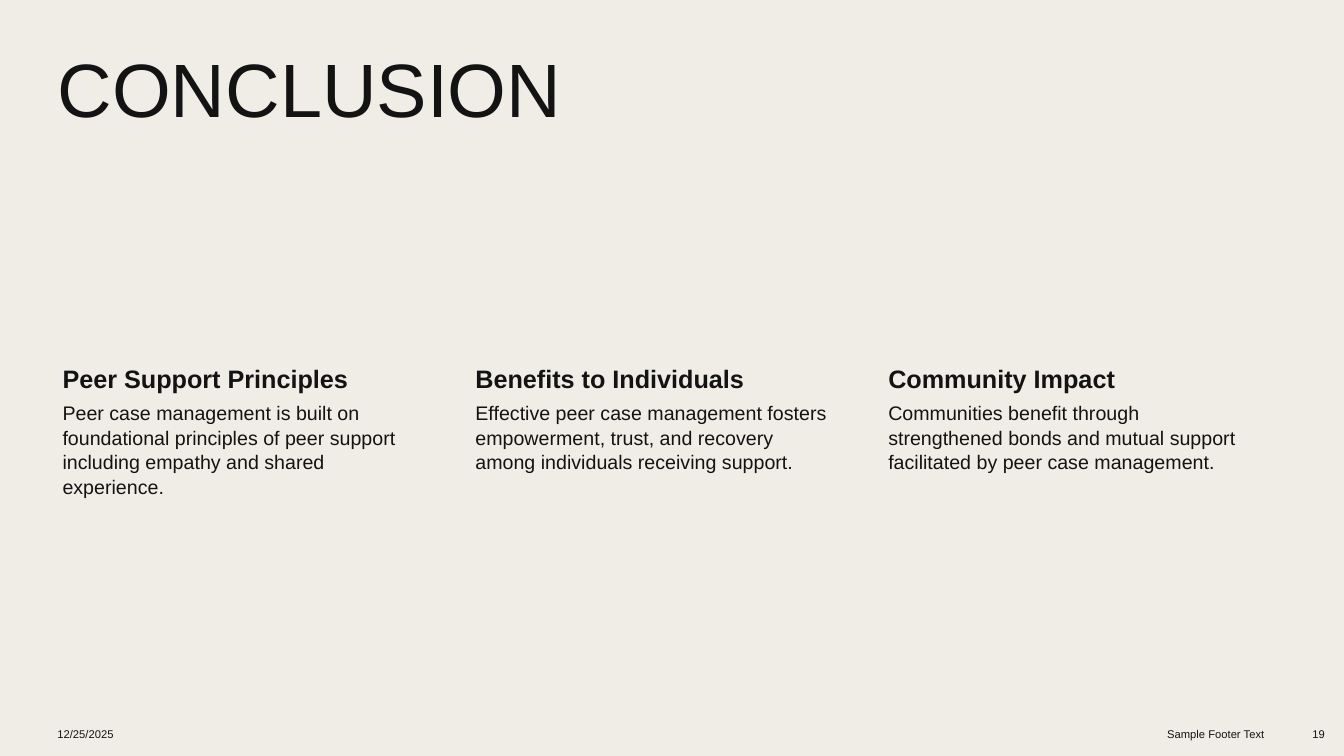
from dataclasses import dataclass

from pptx import Presentation
from pptx.dml.color import RGBColor
from pptx.enum.text import MSO_ANCHOR, MSO_AUTO_SIZE, PP_ALIGN
from pptx.shapes.base import BaseShape
from pptx.slide import Slide
from pptx.util import Inches, Pt

LEFT, RIGHT = PP_ALIGN.LEFT, PP_ALIGN.RIGHT
TOP, MIDDLE = MSO_ANCHOR.TOP, MSO_ANCHOR.MIDDLE
NO_AUTOFIT = MSO_AUTO_SIZE.NONE


@dataclass(frozen=True)
class Theme:
    font: str = "Arial"
    background: RGBColor = RGBColor(0xF0, 0xED, 0xE6)
    ink: RGBColor = RGBColor(0x13, 0x13, 0x13)
    title: int = 54
    heading: int = 18
    body: int = 14
    footer: int = 8


@dataclass(frozen=True)
class Box:
    left: float
    top: float
    width: float
    height: float


@dataclass(frozen=True)
class Style:
    size: int
    bold: bool = False
    align: PP_ALIGN = LEFT
    anchor: MSO_ANCHOR = TOP
    insets: tuple[float, float, float, float] = (0.1, 0.05, 0.1, 0.05)
    line_spacing: float = 1.0
    space_after: float = 0


@dataclass(frozen=True)
class Topic:
    heading: str
    body: str


@dataclass(frozen=True)
class FooterItem:
    text: str
    left: float
    width: float
    align: PP_ALIGN


THEME = Theme()
TITLE_BOX = Box(0.47, 0.47, 11.91, 1.78)
COLUMN_WIDTH = 3.72
HEADING_TOP, HEADING_HEIGHT = 3.57, 0.38
BODY_HEIGHT = 2.65
FOOTER_TOP, FOOTER_HEIGHT = 7.1, 0.37

TITLE_STYLE = Style(THEME.title, line_spacing=0.9)
HEADING_STYLE = Style(THEME.heading, bold=True, insets=(0.15, 0.03, 0.03, 0.03))
BODY_STYLE = Style(THEME.body, insets=(0.15, 0.02, 0.02, 0.02), line_spacing=1.04)

TOPICS = [
    Topic(
        "Peer Support Principles",
        "Peer case management is built on foundational principles of peer support "
        "including empathy and shared experience.",
    ),
    Topic(
        "Benefits to Individuals",
        "Effective peer case management fosters empowerment, trust, and recovery "
        "among individuals receiving support.",
    ),
    Topic(
        "Community Impact",
        "Communities benefit through strengthened bonds and mutual support "
        "facilitated by peer case management.",
    ),
]

FOOTER_ITEMS = [
    FooterItem("12/25/2025", 0.47, 3.11, LEFT),
    FooterItem("Sample Footer Text", 9.73, 2.91, RIGHT),
    FooterItem("19", 12.74, 0.5, RIGHT),
]


def set_all(target: object, values: dict[str, object]) -> None:
    for name, value in values.items():
        setattr(target, name, value)


def write(sp: BaseShape, box: Box, text: str, style: Style) -> None:
    set_all(sp, {
        "left": Inches(box.left),
        "top": Inches(box.top),
        "width": Inches(box.width),
        "height": Inches(box.height),
    })
    tf = sp.text_frame
    left, top, right, bottom = style.insets
    set_all(tf, {
        "word_wrap": True,
        "auto_size": NO_AUTOFIT,
        "vertical_anchor": style.anchor,
        "margin_left": Inches(left),
        "margin_top": Inches(top),
        "margin_right": Inches(right),
        "margin_bottom": Inches(bottom),
    })
    p = tf.paragraphs[0]
    set_all(p, {
        "alignment": style.align,
        "line_spacing": style.line_spacing,
        "space_after": Pt(style.space_after),
    })
    r = p.add_run()
    r.text = text
    set_all(r.font, {"name": THEME.font, "size": Pt(style.size), "bold": style.bold})
    r.font.color.rgb = THEME.ink


def add_text(s: Slide, box: Box, text: str, style: Style) -> None:
    write(s.shapes.add_textbox(0, 0, 0, 0), box, text, style)


def add_topics(s: Slide, topics: list[Topic]) -> None:
    pitch = (TITLE_BOX.width - COLUMN_WIDTH) / (len(topics) - 1)
    for i, topic in enumerate(topics):
        left = TITLE_BOX.left + i * pitch
        heading_box = Box(left, HEADING_TOP, COLUMN_WIDTH, HEADING_HEIGHT)
        body_box = Box(left, HEADING_TOP + HEADING_HEIGHT, COLUMN_WIDTH, BODY_HEIGHT)
        add_text(s, heading_box, topic.heading, HEADING_STYLE)
        add_text(s, body_box, topic.body, BODY_STYLE)


def add_footer(s: Slide, items: list[FooterItem]) -> None:
    for item in items:
        box = Box(item.left, FOOTER_TOP, item.width, FOOTER_HEIGHT)
        style = Style(THEME.footer, align=item.align, anchor=MIDDLE, space_after=6)
        add_text(s, box, item.text, style)


def main() -> None:
    prs = Presentation()
    set_all(prs, {"slide_width": Inches(13.33), "slide_height": Inches(7.5)})
    s = prs.slides.add_slide(prs.slide_layouts.get_by_name("Title Only"))
    s.background.fill.solid()
    s.background.fill.fore_color.rgb = THEME.background
    write(s.shapes.title, TITLE_BOX, "CONCLUSION", TITLE_STYLE)
    add_topics(s, TOPICS)
    add_footer(s, FOOTER_ITEMS)
    prs.save("out.pptx")


if __name__ == "__main__":
    main()
